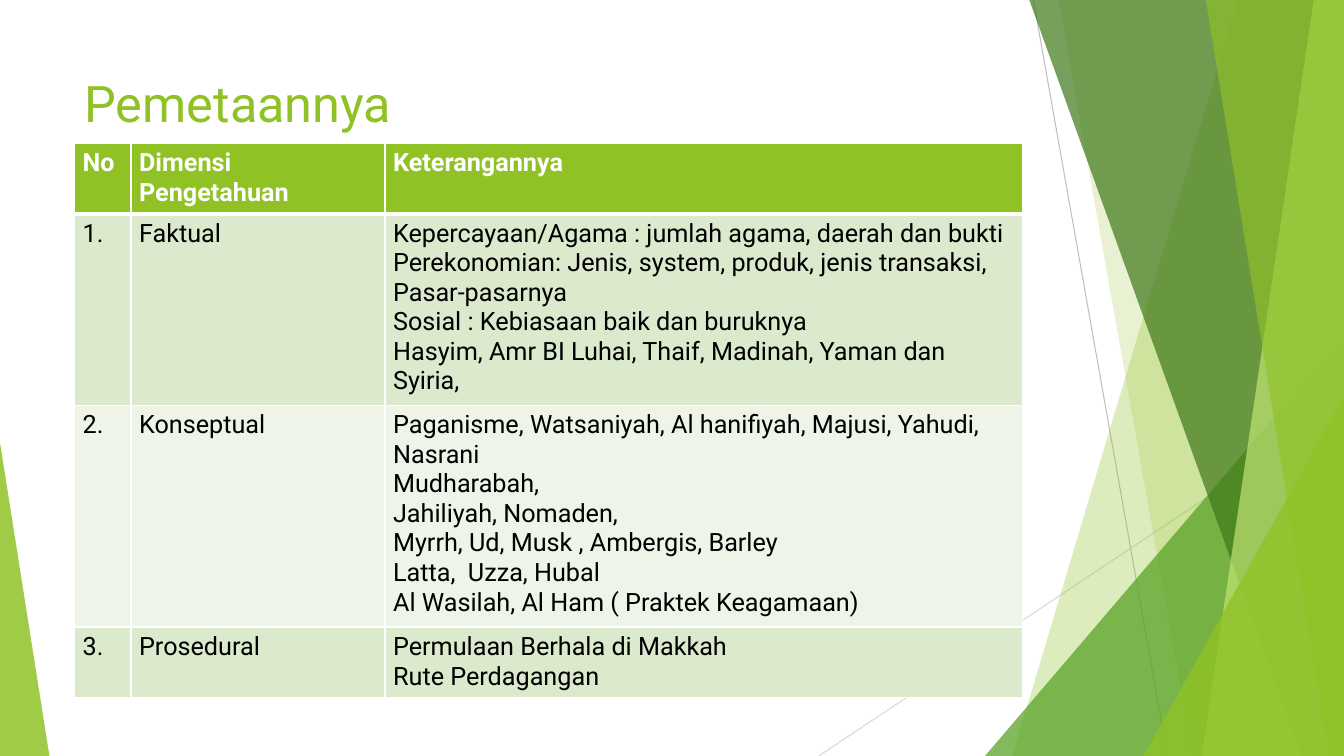
"""Build the slide that maps the dimensions of knowledge in a table."""
from dataclasses import dataclass

from lxml.etree import SubElement
from pptx import Presentation
from pptx.dml.color import RGBColor as Rgb
from pptx.enum.shapes import MSO_CONNECTOR as Connector, MSO_SHAPE as Preset
from pptx.enum.text import MSO_ANCHOR as Anchor
from pptx.oxml.ns import qn
from pptx.util import Inches, Pt

WIDTH, HEIGHT = Inches(13.33), Inches(7.5)
COLORS = {
    "lime": "90C226", "green": "54A021", "forest": "3F7819", "pale": "C0E474",
    "gray": "BFBFBF", "silver": "D9D9D9", "white": "FFFFFF", "black": "000000",
    "band": "DBE9CD", "light band": "EEF4E8",
}
FONT = "Roboto"
TITLE_FORMAT = {"name": FONT, "size": Pt(36), "bold": False}
HEADER_FORMAT = {"name": FONT, "size": Pt(18), "bold": True}
BODY_FORMAT = {**HEADER_FORMAT, "bold": False}
INSETS = {
    "margin_left": Inches(0.08), "margin_right": Inches(0.08),
    "margin_top": Inches(0.05), "margin_bottom": Inches(0.05),
}
TABLE_LEFT, TABLE_TOP = 5.55, 18.93
COLUMN_SHARES = (4.2, 18.9, 47.41)
LINE_SHARE, PADDING_SHARE = 3.91, 1.33


@dataclass
class Ray:
    """A thin straight line, in percent of the slide."""
    start: tuple[float, float]
    end: tuple[float, float]
    color: str


@dataclass
class Panel:
    """A full-height strip from a slanted left edge to the right slide edge."""
    top_left: float
    bottom_left: float
    color: str
    opacity: int


@dataclass
class Wedge:
    """A right triangle standing on the bottom slide edge."""
    left: float
    top: float
    width: float
    apex: int
    color: str
    opacity: int


@dataclass
class Row:
    """A table row with its fill and the number of lines it takes."""
    cells: tuple[str, str, str]
    fill: str
    lines: int


RAYS = (
    Ray((76.89, 0), (86.87, 100), "gray"),
    Ray((100, 53.73), (60.92, 100), "silver"),
)
FACETS = (
    Panel(92.12, 75.32, "lime", 30),
    Panel(78.77, 88.75, "lime", 20),
    Wedge(73.29, 44.4, 26.71, 1, "green", 72),
    Panel(76.59, 96.85, "forest", 70),
    Panel(97.75, 89.42, "pale", 70),
    Panel(89.72, 98.87, "lime", 65),
    Wedge(85.07, 52.4, 14.93, 1, "lime", 80),
    Wedge(0, 58.53, 3.68, 0, "lime", 85),
)
ROWS = (
    Row(("No", "Dimensi Pengetahuan", "Keterangannya"), "lime", 2),
    Row(("1.", "Faktual",
         "Kepercayaan/Agama : jumlah agama, daerah dan bukti\n"
         "Perekonomian: Jenis, system, produk, jenis transaksi, Pasar-pasarnya\n"
         "Sosial : Kebiasaan baik dan buruknya\n"
         "Hasyim, Amr BI Luhai, Thaif, Madinah, Yaman dan Syiria,"), "band", 6),
    Row(("2.", "Konseptual",
         "Paganisme, Watsaniyah, Al hanifiyah, Majusi, Yahudi, Nasrani\n"
         "Mudharabah,\n"
         "Jahiliyah, Nomaden,\n"
         "Myrrh, Ud, Musk , Ambergis, Barley\n"
         "Latta,  Uzza, Hubal\n"
         "Al Wasilah, Al Ham ( Praktek Keagamaan)"), "light band", 7),
    Row(("3.", "Prosedural", "Permulaan Berhala di Makkah\nRute Perdagangan"), "band", 2),
)


def across(share: float) -> int:
    """Turn a percentage of the slide width into a length."""
    return round(WIDTH * share / 100)


def down(share: float) -> int:
    """Turn a percentage of the slide height into a length."""
    return round(HEIGHT * share / 100)


def rgb(color: str) -> Rgb:
    """Look up a named colour."""
    return Rgb.from_string(COLORS[color])


def apply(target: object, values: dict) -> None:
    """Set every attribute listed in the format values."""
    for name, value in values.items():
        setattr(target, name, value)


def write(frame, text: str, font: dict, color: str) -> None:
    """Fill a text frame, one paragraph for each line of text."""
    frame.text = text
    for para in frame.paragraphs:
        for span in para.runs:
            apply(span.font, font)
            span.font.color.rgb = rgb(color)


def draw_ray(page, ray: Ray) -> None:
    """Draw one background line."""
    (x1, y1), (x2, y2) = ray.start, ray.end
    line = page.shapes.add_connector(
        Connector.STRAIGHT, across(x1), down(y1), across(x2), down(y2))
    line.line.color.rgb = rgb(ray.color)
    line.line.width = Pt(0.75)
    SubElement(line._element.spPr, qn("a:effectLst"))


def draw_facet(page, facet: Panel | Wedge) -> None:
    """Draw one translucent facet of the background."""
    if isinstance(facet, Panel):
        builder = page.shapes.build_freeform(across(facet.top_left), 0, scale=1.0)
        builder.add_line_segments(
            [(WIDTH, 0), (WIDTH, HEIGHT), (across(facet.bottom_left), HEIGHT)])
        shape = builder.convert_to_shape()
    else:
        shape = page.shapes.add_shape(
            Preset.ISOSCELES_TRIANGLE, across(facet.left), down(facet.top),
            across(facet.width), down(100 - facet.top))
        shape.adjustments[0] = facet.apex
    shape.shadow.inherit = False
    shape.fill.solid()
    shape.fill.fore_color.rgb = rgb(facet.color)
    shape.line.fill.background()
    tint = shape._element.spPr.find(f"{qn('a:solidFill')}/{qn('a:srgbClr')}")
    SubElement(tint, qn("a:alpha"), val=str(facet.opacity * 1000))


def draw_title(page) -> None:
    """Write the slide title."""
    box = page.shapes.add_textbox(
        across(TABLE_LEFT), down(8.93), across(sum(COLUMN_SHARES)), down(19.2))
    apply(box.text_frame, {"word_wrap": True, "vertical_anchor": Anchor.TOP})
    write(box.text_frame, "Pemetaannya", TITLE_FORMAT, "lime")


def add_borders(cell, top: int, bottom: int) -> None:
    """Give a cell white borders of the stated point widths."""
    properties = cell._tc.get_or_add_tcPr()
    for side, points in (("L", 1), ("R", 1), ("T", top), ("B", bottom)):
        border = SubElement(properties, qn(f"a:ln{side}"), w=str(Pt(points)))
        paint = SubElement(border, qn("a:solidFill"))
        SubElement(paint, qn("a:srgbClr"), val=COLORS["white"])


def draw_table(page) -> None:
    """Draw the table of knowledge dimensions."""
    heights = [down(PADDING_SHARE + LINE_SHARE * row.lines) for row in ROWS]
    table = page.shapes.add_table(
        len(ROWS), len(COLUMN_SHARES), across(TABLE_LEFT), down(TABLE_TOP),
        across(sum(COLUMN_SHARES)), sum(heights)).table
    for column, share in zip(table.columns, COLUMN_SHARES):
        column.width = across(share)
    for index, (row, height) in enumerate(zip(ROWS, heights)):
        table.rows[index].height = height
        font, color = (BODY_FORMAT, "black") if index else (HEADER_FORMAT, "white")
        for cell, text in zip(table.rows[index].cells, row.cells):
            apply(cell, INSETS)
            add_borders(cell, 3 if index == 1 else 1, 1 if index else 3)
            cell.fill.solid()
            cell.fill.fore_color.rgb = rgb(row.fill)
            write(cell.text_frame, text, font, color)


def main() -> None:
    """Build and save the deck."""
    deck = Presentation()
    apply(deck, {"slide_width": WIDTH, "slide_height": HEIGHT})
    page = deck.slides.add_slide(deck.slide_layouts[6])
    for ray in RAYS:
        draw_ray(page, ray)
    for facet in FACETS:
        draw_facet(page, facet)
    draw_title(page)
    draw_table(page)
    deck.save("out.pptx")


if __name__ == "__main__":
    main()
